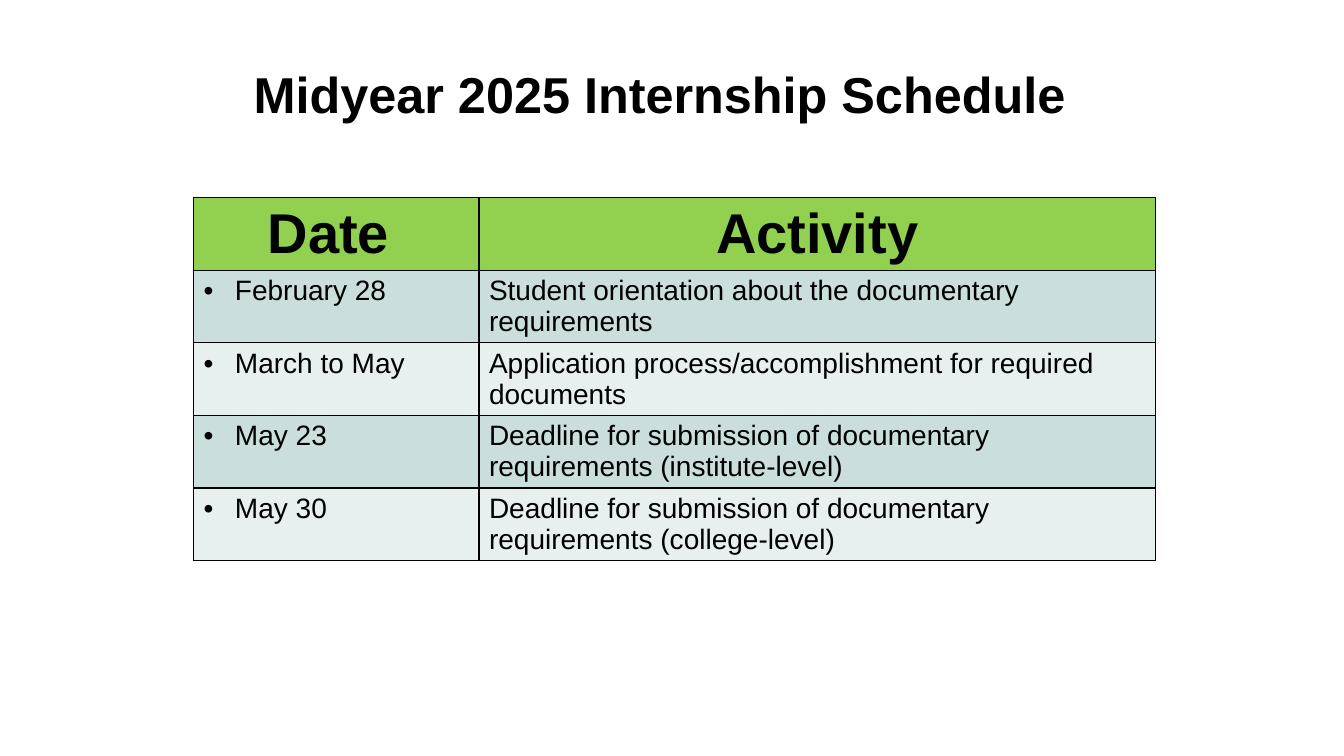
from lxml.etree import SubElement
from pptx import Presentation
from pptx.dml.color import RGBColor
from pptx.enum.text import MSO_ANCHOR, PP_ALIGN
from pptx.oxml.ns import qn
from pptx.util import Inches, Pt

COLORS = {
    "text": "000000",
    "border": "000000",
    "header": "92D050",
    "odd_row": "CADEDD",
    "even_row": "E7EFEF",
}
FONT = "Arial"
TITLE = "Midyear 2025 Internship Schedule"
HEADINGS = ("Date ", "Activity")
SCHEDULE = [
    ("February 28", "Student orientation about the documentary requirements"),
    ("March to May", "Application process/accomplishment for required documents"),
    ("May 23", "Deadline for submission of documentary requirements (institute-level)"),
    ("May 30", "Deadline for submission of documentary requirements (college-level)"),
]
COLUMN_WIDTHS = (2.83, 6.71)
ROW_HEIGHT = 0.72


def style_paragraph(paragraph, size, bold, align):
    paragraph.alignment = align
    paragraph.font.name = FONT
    paragraph.font.size = Pt(size)
    paragraph.font.bold = bold
    paragraph.font.color.rgb = RGBColor.from_string(COLORS["text"])


def add_bullet(paragraph):
    properties = paragraph._p.get_or_add_pPr()
    properties.set("marL", str(Inches(0.31)))
    properties.set("indent", str(Inches(-0.31)))
    bullet_color = SubElement(properties, qn("a:buClr"))
    SubElement(bullet_color, qn("a:srgbClr"), val=COLORS["text"])
    SubElement(properties, qn("a:buFont"), typeface=FONT)
    SubElement(properties, qn("a:buChar"), char="•")


def add_borders(cell):
    properties = cell._tc.get_or_add_tcPr()
    for position, side in enumerate(("a:lnL", "a:lnR", "a:lnT", "a:lnB")):
        line = SubElement(properties, qn(side), w=str(Pt(1)))
        fill = SubElement(line, qn("a:solidFill"))
        SubElement(fill, qn("a:srgbClr"), val=COLORS["border"])
        properties.insert(position, line)


def fill_cell(cell, text, color, size, bold, align, bulleted=False):
    cell.fill.solid()
    cell.fill.fore_color.rgb = RGBColor.from_string(color)
    add_borders(cell)
    cell.text = text
    paragraph = cell.text_frame.paragraphs[0]
    if bulleted:
        add_bullet(paragraph)
    style_paragraph(paragraph, size, bold, align)


def place_title(page, left, top, width, height):
    title = page.shapes.title
    title.left, title.top = Inches(left), Inches(top)
    title.width, title.height = Inches(width), Inches(height)
    title.text_frame.text = TITLE
    title.text_frame.vertical_anchor = MSO_ANCHOR.MIDDLE
    paragraph = title.text_frame.paragraphs[0]
    paragraph.line_spacing = 0.9
    style_paragraph(paragraph, 36, True, PP_ALIGN.CENTER)


def add_schedule(page, left, top):
    row_count = len(SCHEDULE) + 1
    table = page.shapes.add_table(
        row_count, len(HEADINGS), Inches(left), Inches(top),
        Inches(sum(COLUMN_WIDTHS)), Inches(ROW_HEIGHT * row_count),
    ).table
    for column, width in zip(table.columns, COLUMN_WIDTHS):
        column.width = Inches(width)
    for column, heading in enumerate(HEADINGS):
        fill_cell(table.cell(0, column), heading, COLORS["header"], 40, True, PP_ALIGN.CENTER)
    for row, entry in enumerate(SCHEDULE, start=1):
        color = COLORS["odd_row" if row % 2 else "even_row"]
        for column, text in enumerate(entry):
            fill_cell(table.cell(row, column), text, color, 20, False,
                      PP_ALIGN.LEFT, bulleted=column == 0)


def main():
    deck = Presentation()
    deck.slide_width, deck.slide_height = Inches(13.33), Inches(7.5)
    page = deck.slides.add_slide(deck.slide_layouts[5])
    place_title(page, 0.67, 0.6, 11.75, 0.73)
    add_schedule(page, 1.92, 1.96)
    deck.save("out.pptx")


if __name__ == "__main__":
    main()
